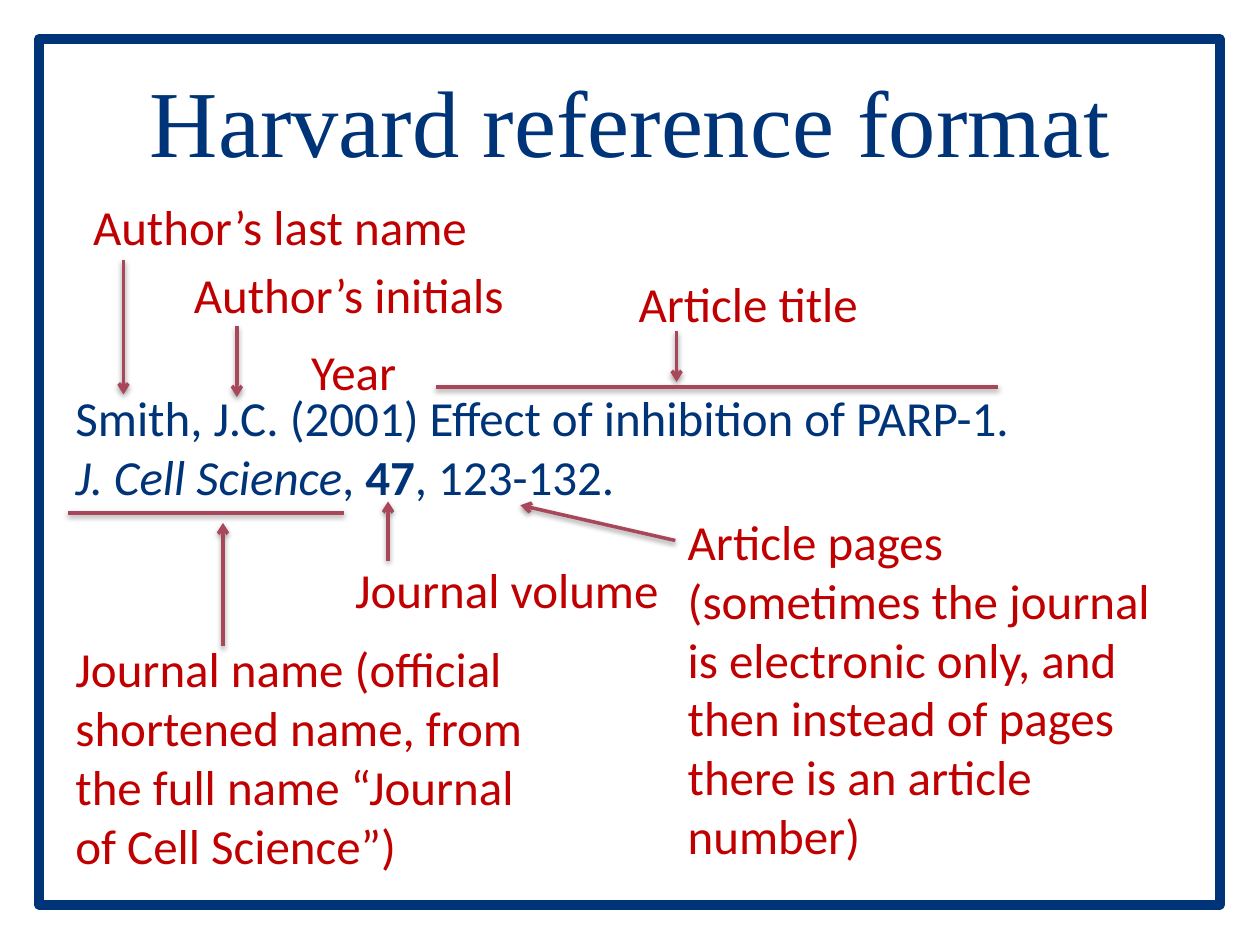
from dataclasses import dataclass

from lxml.etree import SubElement
from pptx import Presentation
from pptx.dml.color import RGBColor
from pptx.enum.shapes import MSO_CONNECTOR, MSO_SHAPE
from pptx.enum.text import MSO_AUTO_SIZE, PP_ALIGN
from pptx.oxml.ns import qn
from pptx.util import Inches, Pt

COLUMNS, ROWS = 100, 75
DECK_WIDTH, DECK_HEIGHT = Inches(10), Inches(7.5)
NAVY, RED, ROSE, BLACK = "003478", "C00000", "A8475A", "000000"
BODY_FONT, TITLE_FONT = "Calibri", "Times New Roman"


@dataclass(frozen=True)
class Span:
    """A stretch of text with one style."""
    text: str
    bold: bool = False
    italic: bool = False


@dataclass(frozen=True)
class Label:
    """A red note placed on the grid."""
    text: str
    column: float
    row: float
    width: float
    height: float = 5.7
    wrap: bool = False


@dataclass(frozen=True)
class Pointer:
    """A line between two grid points, with or without an arrowhead."""
    start: tuple[float, float]
    end: tuple[float, float]
    arrow: bool = True


REFERENCE = [
    [Span("Smith, J.C. (2001) Effect of inhibition of PARP-1.")],
    [Span("J. Cell Science", italic=True), Span(", "), Span("47", bold=True),
     Span(", 123-132.")],
]

LABELS = [
    Label("Author’s last name", 6.4, 15.1, 32),
    Label("Author’s initials", 14.4, 20.5, 26.9),
    Label("Year", 23.7, 26.6, 8.8),
    Label("Article title", 49.7, 21.2, 19.6),
    Label("Journal name (official shortened name, from the full name “Journal of Cell Science”)",
          5, 50.2, 38.5, 19.9, wrap=True),
    Label("Journal volume", 27.2, 43.9, 26.4),
    Label("Article pages (sometimes the journal is electronic only, and then instead of pages "
          "there is an article number)", 53.6, 40.1, 41.4, 29.3, wrap=True),
]

POINTERS = [
    Pointer((9.8, 20.6), (9.8, 31.3)),
    Pointer((18.8, 25.9), (18.8, 31.5)),
    Pointer((53.7, 26.3), (53.7, 30.3)),
    Pointer((34.6, 30.7), (79.2, 30.7), arrow=False),
    Pointer((17.7, 51.3), (17.7, 41.5)),
    Pointer((5.4, 40.7), (27.3, 40.7), arrow=False),
    Pointer((30.8, 44.5), (30.8, 39.8)),
    Pointer((53.6, 42.9), (41.3, 40.1)),
]


def x(column: float) -> int:
    """Turn grid columns into a length."""
    return round(DECK_WIDTH * column / COLUMNS)


def y(row: float) -> int:
    """Turn grid rows into a length."""
    return round(DECK_HEIGHT * row / ROWS)


def color(value: str) -> RGBColor:
    """Turn a hex string into a colour."""
    return RGBColor.from_string(value)


def add_text(page, lines: list[list[Span]], place: tuple[float, float, float, float],
             ink: str, size: float = 28, font: str = BODY_FONT, wrap: bool = True):
    """Add a text box with styled paragraphs and return its frame."""
    column, row, width, height = place
    box = page.shapes.add_textbox(x(column), y(row), x(width), y(height))
    frame = box.text_frame
    frame.word_wrap = wrap
    frame.auto_size = MSO_AUTO_SIZE.SHAPE_TO_FIT_TEXT
    frame.text = "\n".join("" for _ in lines)
    for para, spans in zip(frame.paragraphs, lines):
        for span in spans:
            run = para.add_run()
            run.text = span.text
            run.font.name, run.font.size = font, Pt(size)
            run.font.bold, run.font.italic = span.bold, span.italic
            run.font.color.rgb = color(ink)
    return frame


def add_border(page) -> None:
    """Draw the frame around the page."""
    border = page.shapes.add_shape(MSO_SHAPE.RECTANGLE, x(3.1), y(3.1), x(93.7), y(68.7))
    border.shadow.inherit = False
    border.fill.background()
    border.line.color.rgb = color(NAVY)
    border.line.width = Pt(5.67)


def add_title(page, text: str) -> None:
    """Write the centred heading."""
    frame = add_text(page, [[Span(text)]], (5, 3.7, 90, 9.7), NAVY, 54, TITLE_FONT)
    frame.auto_size = MSO_AUTO_SIZE.NONE
    frame.margin_top = y(1.3)
    frame.paragraphs[0].alignment = PP_ALIGN.CENTER


def add_pointer(page, pointer: Pointer) -> None:
    """Draw a line with a soft shadow below it."""
    (start_column, start_row), (end_column, end_row) = pointer.start, pointer.end
    line = page.shapes.add_connector(MSO_CONNECTOR.STRAIGHT, x(start_column), y(start_row),
                                     x(end_column), y(end_row))
    line.line.color.rgb = color(ROSE)
    line.line.width = Pt(2)
    properties = line._element.spPr
    if pointer.arrow:
        SubElement(properties.find(qn("a:ln")), qn("a:tailEnd"), type="arrow")
    effects = SubElement(properties, qn("a:effectLst"))
    shadow = SubElement(effects, qn("a:outerShdw"), blurRad="40000", dist="20000",
                        dir="5400000", rotWithShape="0")
    tint = SubElement(shadow, qn("a:srgbClr"), val=BLACK)
    SubElement(tint, qn("a:alpha"), val="38000")


def main() -> None:
    """Build the deck and save it."""
    deck = Presentation()
    deck.slide_width, deck.slide_height = DECK_WIDTH, DECK_HEIGHT
    page = deck.slides.add_slide(deck.slide_layouts[6])
    add_border(page)
    add_title(page, "Harvard reference format")
    add_text(page, REFERENCE, (5, 30.3, 77.1, 10.4), NAVY)
    for label in LABELS:
        add_text(page, [[Span(label.text)]],
                 (label.column, label.row, label.width, label.height), RED, wrap=label.wrap)
    for pointer in POINTERS:
        add_pointer(page, pointer)
    deck.save("out.pptx")


if __name__ == "__main__":
    main()
